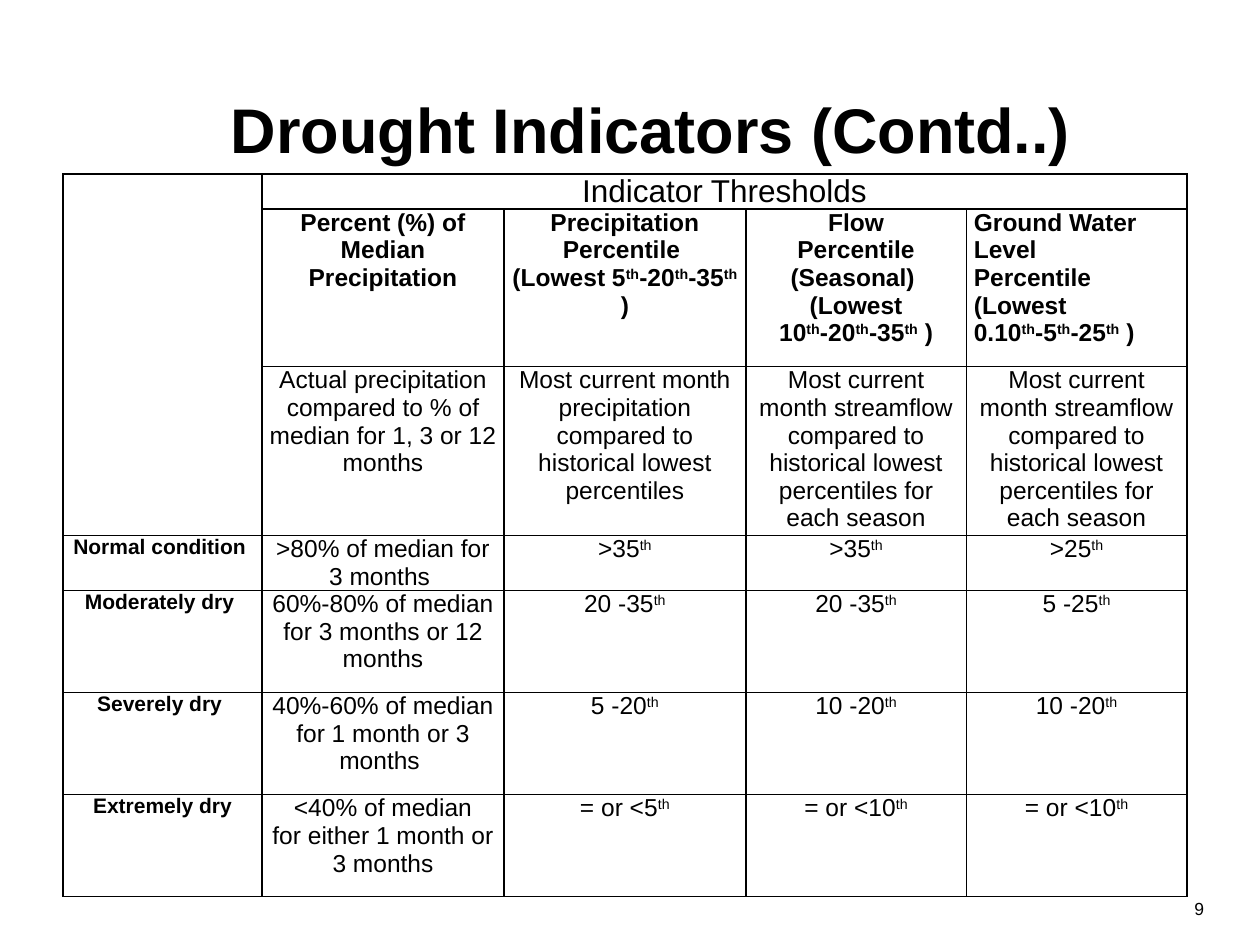
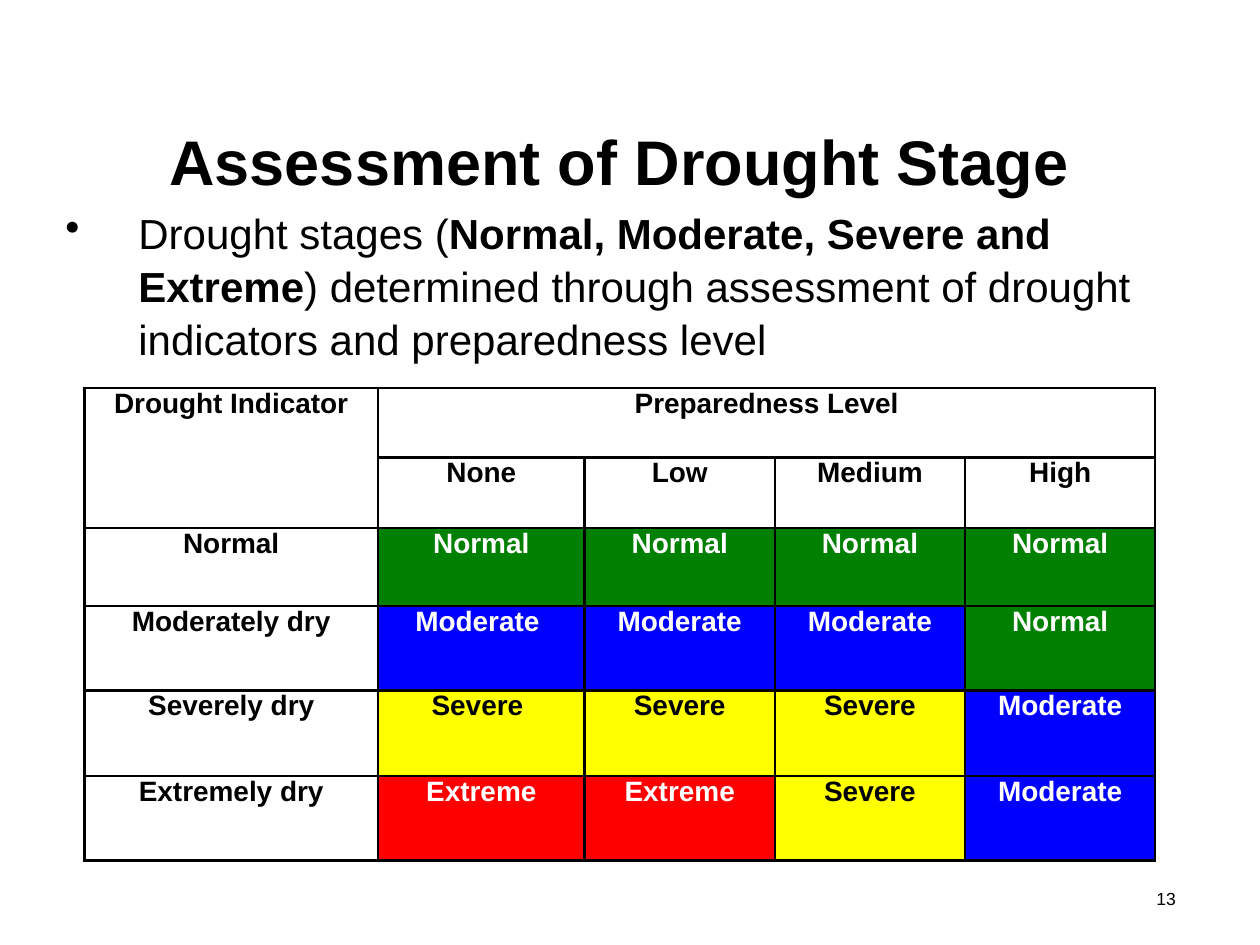
from dataclasses import dataclass
from typing import Callable, NamedTuple, Optional

from lxml.etree import SubElement
from pptx import Presentation
from pptx.dml.color import RGBColor
from pptx.enum.text import MSO_AUTO_SIZE as AutoSize, PP_ALIGN as Align
from pptx.oxml.ns import qn
from pptx.util import Inches, Pt

BLACK = RGBColor(0x00, 0x00, 0x00)
WHITE = RGBColor(0xFF, 0xFF, 0xFF)
GREEN = RGBColor(0x00, 0x80, 0x00)
BLUE = RGBColor(0x00, 0x00, 0xFF)
YELLOW = RGBColor(0xFF, 0xFF, 0x00)
RED = RGBColor(0xFF, 0x00, 0x00)
FONT = "Arial"
HANGING_INDENT = Inches(0.58)
SUPERSCRIPT_MARK = "^"
BOLD_MARK = "*"
STAGE_COLORS = {
    "Normal": (GREEN, WHITE),
    "Moderate": (BLUE, WHITE),
    "Severe": (YELLOW, BLACK),
    "Extreme": (RED, WHITE),
}


class Box(NamedTuple):
    left: float
    top: float
    width: float
    height: float


class CellStyle(NamedTuple):
    size: int
    bold: bool
    color: RGBColor = BLACK
    fill: Optional[RGBColor] = None
    align: Align = Align.CENTER


class Merge(NamedTuple):
    first: tuple[int, int]
    last: tuple[int, int]


@dataclass(frozen=True)
class TableSpec:
    box: Box
    columns: list[float]
    rows: list[float]
    texts: list[list[str]]
    merges: list[Merge]
    style: Callable[[int, int, str], CellStyle]
    side_margin: float
    border_width: float


@dataclass(frozen=True)
class PageNumber:
    number: str
    box: Box
    inset: float


def format_run(run, size: int, bold: bool, color: RGBColor = BLACK) -> None:
    run.font.name = FONT
    run.font.size = Pt(size)
    run.font.bold = bold
    run.font.color.rgb = color


def add_marked_runs(paragraph, text: str, mark: str) -> list:
    marked_runs = []
    for index, part in enumerate(text.split(mark)):
        if part:
            run = paragraph.add_run()
            run.text = part
            if index % 2:
                marked_runs.append(run)
    return marked_runs


def set_hanging_indent(paragraph) -> None:
    properties = paragraph._p.get_or_add_pPr()
    properties.set("marL", str(HANGING_INDENT))
    properties.set("indent", str(-HANGING_INDENT))


def add_text_frame(slide, box: Box):
    text_frame = slide.shapes.add_textbox(*map(Inches, box)).text_frame
    text_frame.word_wrap = True
    return text_frame


def add_title(slide, text: str, box: Box) -> None:
    text_frame = add_text_frame(slide, box)
    text_frame.auto_size = AutoSize.SHAPE_TO_FIT_TEXT
    text_frame.text = text
    paragraph = text_frame.paragraphs[0]
    paragraph.alignment = Align.CENTER
    set_hanging_indent(paragraph)
    format_run(paragraph.runs[0], 36, True)


def add_page_number(slide, page: PageNumber) -> None:
    text_frame = add_text_frame(slide, page.box)
    text_frame.margin_left = Inches(page.inset)
    text_frame.margin_right = 0
    text_frame.text = page.number
    format_run(text_frame.paragraphs[0].runs[0], 10, False)


def add_bullet(slide, text: str, box: Box) -> None:
    paragraph = add_text_frame(slide, box).paragraphs[0]
    set_hanging_indent(paragraph)
    bullet = SubElement(paragraph._p.get_or_add_pPr(), qn("a:buChar"))
    bullet.set("char", "•")
    paragraph.line_spacing = 1.05
    bold_runs = add_marked_runs(paragraph, text, BOLD_MARK)
    for run in paragraph.runs:
        format_run(run, 24, False)
    for run in bold_runs:
        run.font.bold = True


def set_borders(cell, width: float) -> None:
    properties = cell._tc.get_or_add_tcPr()
    for position, side in enumerate(("a:lnL", "a:lnR", "a:lnT", "a:lnB")):
        line = properties.makeelement(qn(side), {"w": str(Pt(width))})
        fill = SubElement(line, qn("a:solidFill"))
        SubElement(fill, qn("a:srgbClr")).set("val", str(BLACK))
        properties.insert(position, line)


def fill_cell(cell, text: str, style: CellStyle) -> None:
    cell.text = text
    for paragraph, marked_text in zip(cell.text_frame.paragraphs, text.split("\n")):
        paragraph.alignment = style.align
        paragraph.text = ""
        superscripts = add_marked_runs(paragraph, marked_text, SUPERSCRIPT_MARK)
        for run in paragraph.runs:
            format_run(run, style.size, style.bold, style.color)
        for run in superscripts:
            run._r.get_or_add_rPr().set("baseline", "30000")
    if style.fill is None:
        cell.fill.background()
    else:
        cell.fill.solid()
        cell.fill.fore_color.rgb = style.fill


def add_table(slide, spec: TableSpec) -> None:
    shape = slide.shapes.add_table(len(spec.rows), len(spec.columns), *map(Inches, spec.box))
    table = shape.table
    table.first_row = False
    table.horz_banding = False
    for column, width in zip(table.columns, spec.columns):
        column.width = Inches(width)
    for row, height in zip(table.rows, spec.rows):
        row.height = Inches(height)
    for row_index, row_texts in enumerate(spec.texts):
        for column_index, text in enumerate(row_texts):
            cell = table.cell(row_index, column_index)
            cell.margin_left = cell.margin_right = Inches(spec.side_margin)
            cell.margin_top = cell.margin_bottom = 0
            fill_cell(cell, text, spec.style(row_index, column_index, text))
            set_borders(cell, spec.border_width)
    for merge in spec.merges:
        table.cell(*merge.first).merge(table.cell(*merge.last))


def threshold_style(row: int, column: int, text: str) -> CellStyle:
    if row == 0:
        return CellStyle(18, False)
    if row == 1:
        return CellStyle(14, True, align=Align.LEFT if column == 4 else Align.CENTER)
    return CellStyle(12, True) if column == 0 else CellStyle(14, False)


def stage_style(row: int, column: int, text: str) -> CellStyle:
    if row < 2 or column == 0:
        return CellStyle(16, True)
    fill, color = STAGE_COLORS[text.strip()]
    return CellStyle(16, True, color, fill)


STREAMFLOW = (
    "Most current month streamflow compared to historical lowest percentiles for each season"
)
THRESHOLDS = TableSpec(
    box=Box(0.5, 1.38, 8.92, 5.71),
    columns=[1.58, 1.92, 1.92, 1.75, 1.75],
    rows=[0.27, 1.25, 1.34, 0.42] + [0.81] * 3,
    texts=[
        ["", "Indicator Thresholds", "", "", ""],
        [
            "",
            "Percent (%) of Median Precipitation",
            "Precipitation\nPercentile \n(Lowest 5^th^-20^th^-35^th^ )",
            "Flow\nPercentile (Seasonal) \n(Lowest 10^th^-20^th^-35^th^ )",
            "Ground Water Level\nPercentile\n(Lowest 0.10^th^-5^th^-25^th^ )",
        ],
        [
            "",
            "Actual precipitation compared to % of median for 1, 3 or 12 months",
            "Most current month precipitation compared to historical lowest percentiles",
            STREAMFLOW,
            STREAMFLOW,
        ],
        ["Normal condition ", ">80% of median for 3 months ", ">35^th^", ">35^th^", ">25^th^"],
        [
            "Moderately dry ",
            "60%-80% of median for 3 months or 12 months",
            "20 -35^th^",
            "20 -35^th^",
            "5 -25^th^",
        ],
        [
            "Severely dry ",
            "40%-60% of median for 1 month or 3 months ",
            "5 -20^th^",
            "10 -20^th^",
            "10 -20^th^",
        ],
        [
            "Extremely dry",
            "<40% of median\nfor either 1 month or 3 months",
            "= or <5^th^",
            "= or <10^th^",
            "= or <10^th^",
        ],
    ],
    merges=[Merge((0, 0), (2, 0)), Merge((0, 1), (0, 4))],
    style=threshold_style,
    side_margin=0.06,
    border_width=1,
)
STAGES = TableSpec(
    box=Box(0.67, 3.08, 8.5, 3.75),
    columns=[2.33, 1.64] + [1.51] * 3,
    rows=[0.55, 0.56, 0.62, 0.67, 0.68, 0.67],
    texts=[
        ["Drought Indicator", "Preparedness Level", "", "", ""],
        ["", "None", "Low", "Medium", "High"],
        ["Normal"] * 5,
        ["Moderately dry", "Moderate ", "Moderate", "Moderate", "Normal"],
        ["Severely dry", "Severe ", "Severe", "Severe", "Moderate"],
        ["Extremely dry", "Extreme", "Extreme", "Severe", "Moderate"],
    ],
    merges=[Merge((0, 0), (1, 0)), Merge((0, 1), (0, 4))],
    style=stage_style,
    side_margin=0.07,
    border_width=1.5,
)


def add_blank_slide(presentation):
    return presentation.slides.add_slide(presentation.slide_layouts[6])


def build_indicators_slide(presentation) -> None:
    slide = add_blank_slide(presentation)
    add_table(slide, THRESHOLDS)
    add_title(slide, "Drought Indicators (Contd..)", Box(1.58, 0.67, 7.17, 0.71))
    add_page_number(slide, PageNumber("9", Box(9.42, 7.08, 0.17, 0.42), 0.06))


def build_assessment_slide(presentation) -> None:
    slide = add_blank_slide(presentation)
    add_bullet(
        slide,
        "Drought stages (*Normal, Moderate, Severe and Extreme*) determined through "
        "assessment of drought indicators and preparedness level",
        Box(0.42, 1.58, 9.25, 1.5),
    )
    add_title(slide, "Assessment of Drought Stage", Box(0.75, 0.92, 8.33, 0.71))
    add_table(slide, STAGES)
    add_page_number(slide, PageNumber("13", Box(9.08, 7, 0.5, 0.5), 0.1))


def main() -> None:
    presentation = Presentation()
    presentation.slide_width = Inches(10)
    presentation.slide_height = Inches(7.5)
    build_indicators_slide(presentation)
    build_assessment_slide(presentation)
    presentation.save("out.pptx")


if __name__ == "__main__":
    main()
